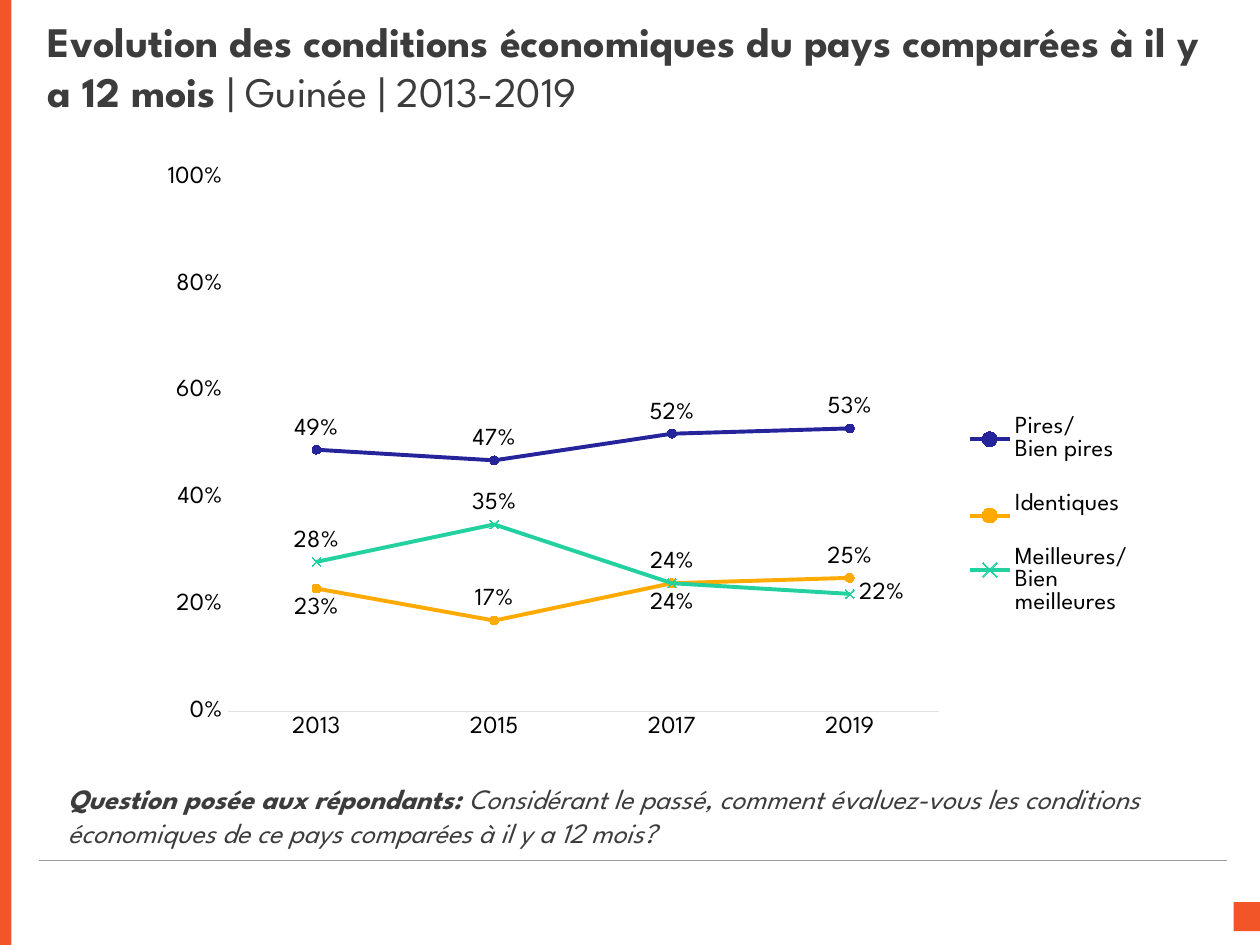
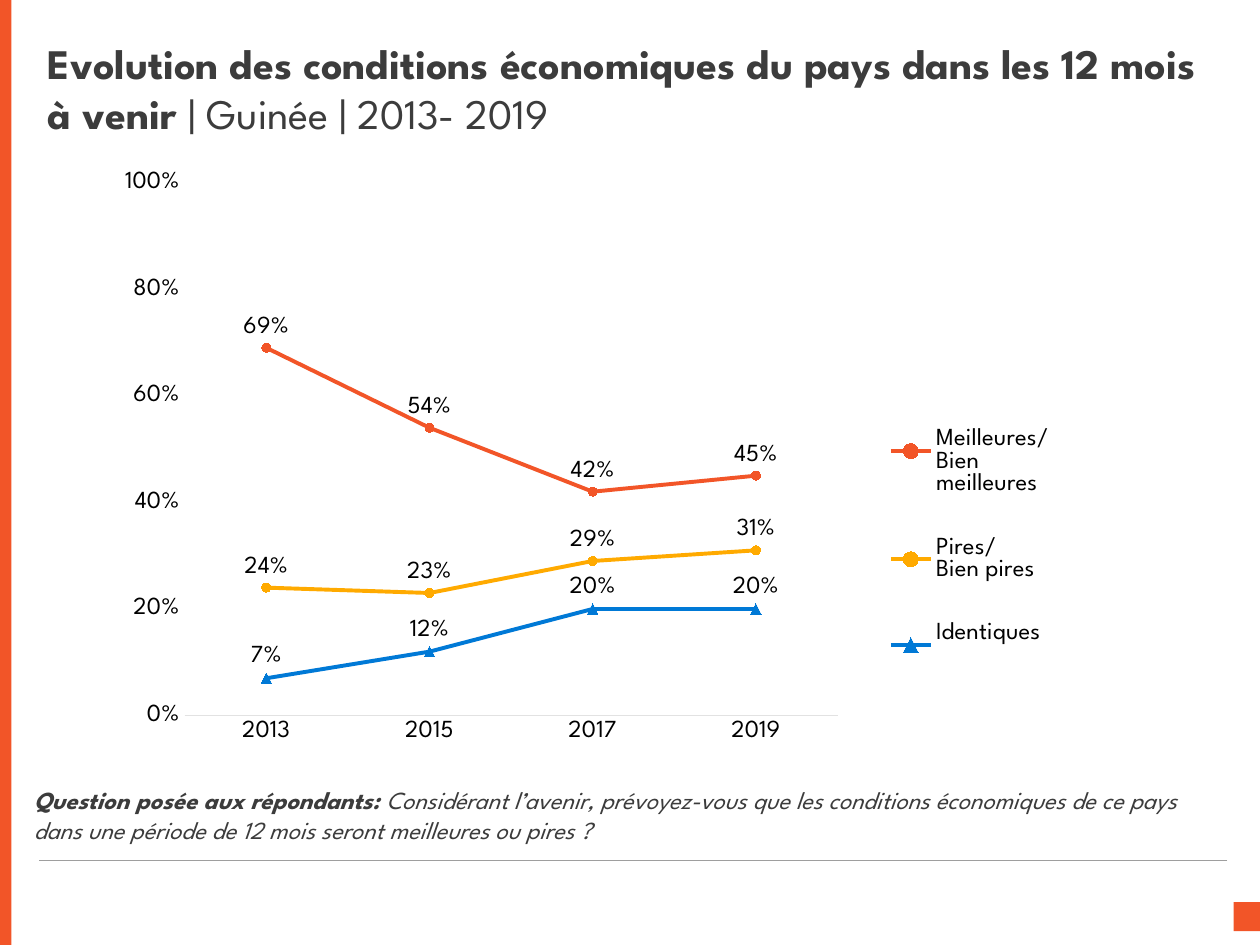
import pptx
import pptx.chart.data
import pptx.dml.color
import pptx.enum.chart
import pptx.enum.shapes
import pptx.enum.text
import pptx.oxml.ns
import pptx.oxml.xmlchemy
import pptx.util

PX = 9144  # 100 px to the inch
FONT = "League Spartan"
ORANGE, AMBER, NAVY, GREEN, BLUE = "F25528", "FFAA00", "25249B", "23D1A0", "0079D6"
GREY, RULE, AXIS, BLACK = "3C3C3C", "9E9E9E", "E2E2E2", "000000"
YEARS = ["2013", "2015", "2017", "2019"]
BETTER, SAME, WORSE = "Meilleures/\nBien meilleures", "Identiques", "Pires/\nBien pires"
LABEL = pptx.enum.chart.XL_LABEL_POSITION
MARKER = pptx.enum.chart.XL_MARKER_STYLE
TICK = pptx.enum.chart.XL_TICK_MARK
qn = pptx.oxml.ns.qn
new_element = pptx.oxml.xmlchemy.OxmlElement


def px(*lengths):
    return [pptx.util.Emu(n * PX) for n in lengths]


def rgb(color):
    return pptx.dml.color.RGBColor.from_string(color)


def set_attrs(obj, values):
    for name, value in values.items():
        setattr(obj, name, value)


def format_font(font, size, color, **flags):
    set_attrs(font, {"name": FONT, "size": pptx.util.Pt(size), **flags})
    font.color.rgb = rgb(color)


def format_line(line, color, width):
    line.color.rgb = rgb(color)
    line.width = pptx.util.Pt(width)


def add_block(s, box):
    sp = s.shapes.add_shape(pptx.enum.shapes.MSO_SHAPE.RECTANGLE, *px(*box))
    sp.shadow.inherit = False
    sp.fill.solid()
    sp.fill.fore_color.rgb = rgb(ORANGE)
    sp.line.fill.background()


def add_rule(s, ends):
    sp = s.shapes.add_connector(pptx.enum.shapes.MSO_CONNECTOR.STRAIGHT, *px(*ends))
    format_line(sp.line, RULE, 0.25)
    sp._element.spPr.append(new_element("a:effectLst"))


def add_frame(s):
    """Draw the orange band, corner block and bottom rule."""
    add_block(s, (979, 716, 22, 23))
    add_rule(s, (974, 683, 31, 683))
    add_block(s, (0, 0, 9, 750))


def fill_text(sp, bold, plain, size, spacing, anchor, italic=False):
    """Write one paragraph: a bold opening followed by regular text."""
    tf = sp.text_frame
    set_attrs(tf, {"word_wrap": True, "vertical_anchor": anchor,
                   "auto_size": pptx.enum.text.MSO_AUTO_SIZE.NONE})
    p = tf.paragraphs[0]
    set_attrs(p, {"alignment": pptx.enum.text.PP_ALIGN.LEFT,
                  "line_spacing": pptx.util.Pt(spacing)})
    for text, is_bold in ((bold, True), (plain, False)):
        r = p.add_run()
        r.text = text
        format_font(r.font, size, GREY, bold=is_bold, italic=italic)


def add_title(s, box, bold, plain):
    sp = s.shapes.title
    set_attrs(sp, dict(zip(("left", "top", "width", "height"), px(*box))))
    fill_text(sp, bold, plain, 24, 28.6, pptx.enum.text.MSO_ANCHOR.MIDDLE)


def add_question(s, box, question, size, spacing):
    sp = s.shapes.add_textbox(*px(*box))
    fill_text(sp, "Question posée aux répondants: ", question, size, spacing,
              pptx.enum.text.MSO_ANCHOR.TOP, italic=True)


def place_part(part, index, fractions, inner=False):
    """Give a plot area or legend a manual layout in fractions of the chart."""
    for old in part.findall(qn("c:layout")):
        part.remove(old)
    layout = new_element("c:layout")
    manual = new_element("c:manualLayout")
    layout.append(manual)
    values = [("layoutTarget", "inner")] if inner else []
    values += [("xMode", "edge"), ("yMode", "edge"), *zip("xywh", fractions)]
    for name, value in values:
        node = new_element(f"c:{name}")
        node.set("val", str(value))
        manual.append(node)
    part.insert(index, layout)


def format_axes(chart):
    years, shares = chart.category_axis, chart.value_axis
    for axis in (years, shares):
        set_attrs(axis, {"major_tick_mark": TICK.NONE, "minor_tick_mark": TICK.NONE,
                         "has_major_gridlines": False})
        format_font(axis.tick_labels.font, 14, BLACK)
    format_line(years.format.line, AXIS, 0.75)
    shares.format.line.fill.background()
    set_attrs(shares, {"minimum_scale": 0, "maximum_scale": 1, "major_unit": 0.2})
    set_attrs(shares.tick_labels, {"number_format": "0%", "number_format_is_linked": False})


def format_series(series, color, marker, moved):
    series.smooth = False
    format_line(series.format.line, color, 2.25)
    set_attrs(series.marker, {"style": marker, "size": 6 if marker == MARKER.TRIANGLE else 5})
    series.marker.format.fill.solid()
    series.marker.format.fill.fore_color.rgb = rgb(color)
    format_line(series.marker.format.line, color, 0.75)
    labels = series.data_labels
    set_attrs(labels, {"show_value": True, "position": LABEL.ABOVE,
                       "number_format": "0%", "number_format_is_linked": False})
    format_font(labels.font, 14, BLACK)
    for point, position in moved.items():
        label = series.points[point].data_label
        format_font(label.font, 14, BLACK)
        label.position = position


def add_trend_chart(s, box, plot, legend, answers):
    """Each answer is (name, values, color, marker, moved labels)."""
    data = pptx.chart.data.CategoryChartData(number_format="0%")
    data.categories = YEARS
    for name, values, *_ in answers:
        data.add_series(name, values)
    chart = s.shapes.add_chart(pptx.enum.chart.XL_CHART_TYPE.LINE_MARKERS,
                               *px(*box), data).chart
    set_attrs(chart, {"has_title": False, "has_legend": True})
    format_font(chart.font, 14, BLACK)
    set_attrs(chart.legend, {"position": pptx.enum.chart.XL_LEGEND_POSITION.RIGHT,
                             "include_in_layout": False})
    format_font(chart.legend.font, 14, BLACK)
    chart.plots[0].vary_by_categories = False
    format_axes(chart)
    for series, (_, _, color, marker, moved) in zip(chart.plots[0].series, answers):
        format_series(series, color, marker, moved)
    place_part(chart._chartSpace.chart.plotArea, 0, plot, inner=True)
    place_part(chart.legend._element, 1, legend)


def add_slide(prs):
    s = prs.slides.add_slide(prs.slide_layouts[5])
    add_frame(s)
    return s


def main():
    prs = pptx.Presentation()
    prs.slide_width, prs.slide_height = px(1000, 750)

    s = add_slide(prs)
    add_title(s, (28, 14, 953, 77),
              "Evolution des conditions économiques du pays comparées à il y a 12 mois ",
              "| Guinée | 2013-2019")
    add_question(s, (44, 616, 956, 59),
                 "Considérant le passé, comment évaluez-vous les conditions économiques "
                 "de ce pays comparées à il y a 12 mois?", 16, 19)
    add_trend_chart(s, (117, 122, 795, 471), (0.08, 0.04, 0.71, 0.9), (0.81, 0.39, 0.18, 0.44), [
        (WORSE, (0.49, 0.47, 0.52, 0.53), NAVY, MARKER.CIRCLE, {}),
        (SAME, (0.23, 0.17, 0.24, 0.25), AMBER, MARKER.CIRCLE, {0: LABEL.BELOW}),
        (BETTER, (0.28, 0.35, 0.24, 0.22), GREEN, MARKER.X,
         {2: LABEL.BELOW, 3: LABEL.RIGHT}),
    ])

    s = add_slide(prs)
    add_title(s, (28, 28, 952, 84),
              "Evolution des conditions économiques du pays dans les 12 mois à venir ",
              "| Guinée | 2013- 2019")
    add_question(s, (17, 618, 963, 62),
                 "Considérant l’avenir, prévoyez-vous que les conditions économiques de ce pays "
                 "dans une période de 12 mois seront meilleures ou pires ?", 14, 17)
    add_trend_chart(s, (94, 131, 751, 465), (0.07, 0.03, 0.69, 0.91), (0.81, 0.38, 0.18, 0.51), [
        (BETTER, (0.69, 0.54, 0.42, 0.45), ORANGE, MARKER.CIRCLE, {}),
        (WORSE, (0.24, 0.23, 0.29, 0.31), AMBER, MARKER.CIRCLE, {}),
        (SAME, (0.07, 0.12, 0.2, 0.2), BLUE, MARKER.TRIANGLE, {}),
    ])
    prs.save("out.pptx")


if __name__ == "__main__":
    main()
